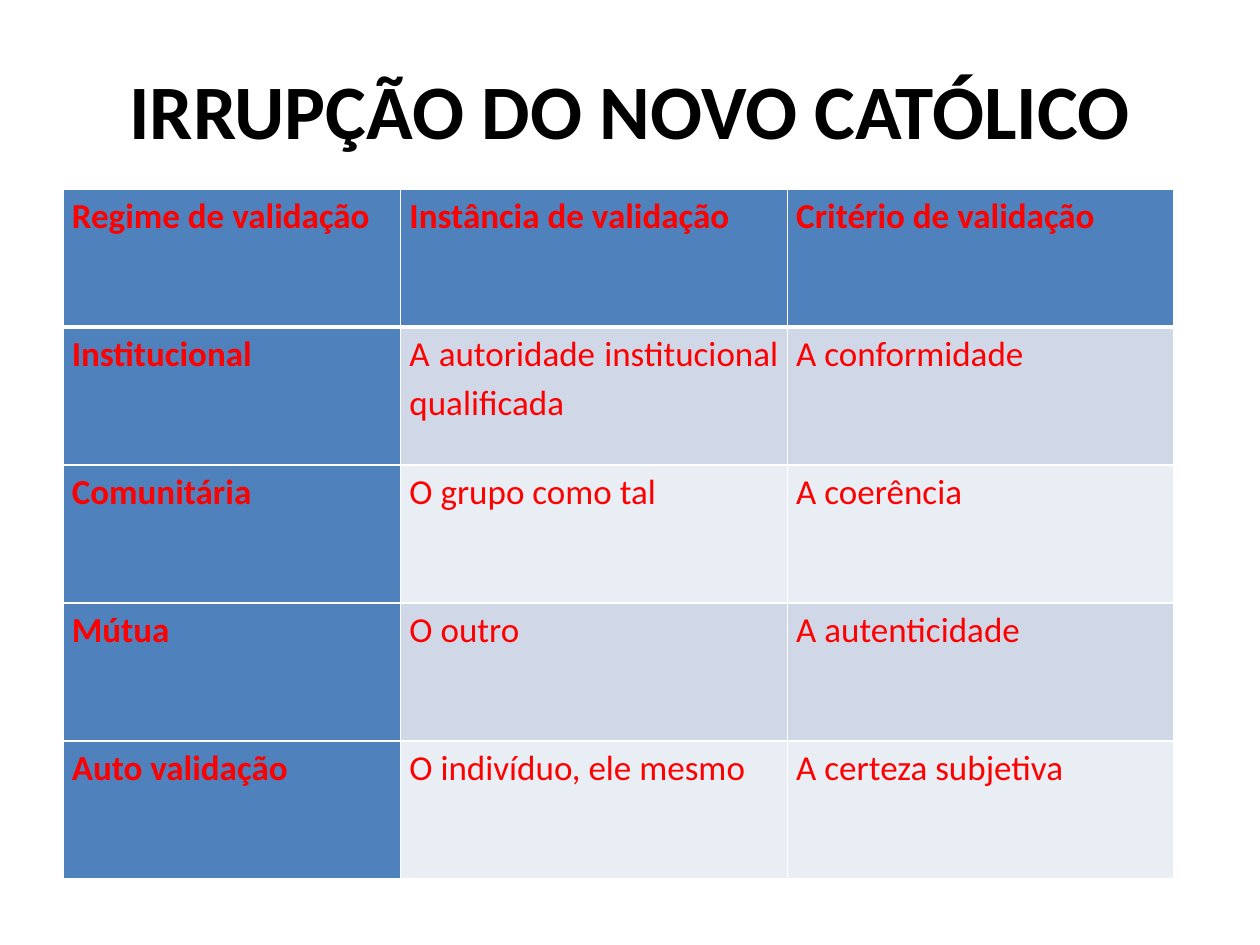
from lxml import etree
from pptx import Presentation
from pptx.dml.color import RGBColor
from pptx.enum.text import MSO_ANCHOR, PP_ALIGN
from pptx.oxml.ns import qn
from pptx.util import Inches, Pt

CENTER, JUSTIFY = PP_ALIGN.CENTER, PP_ALIGN.JUSTIFY
TOP, MIDDLE = MSO_ANCHOR.TOP, MSO_ANCHOR.MIDDLE

TITLE = "IRRUPÇÃO DO NOVO CATÓLICO"
REGIMES = [
    ["Regime de validação", "Instância de validação", "Critério de validação"],
    ["Institucional", "A autoridade institucional \nqualificada", "A conformidade"],
    ["Comunitária", "O grupo como tal", "A coerência"],
    ["Mútua", "O outro", "A autenticidade"],
    ["Auto validação", "O indivíduo, ele mesmo", "A certeza subjetiva"],
]
COLUMN_WIDTHS = [2.68, 3.07, 3.07]


def color(hex_value):
    return RGBColor.from_string(hex_value)


class SlideBuilder:
    FONT = "Calibri"
    TITLE_COLOR, CELL_COLOR = "000000", "FF0000"
    HEADER_FILL, BORDER = "4F81BD", "FFFFFF"
    BANDS = ["E9EDF4", "D0D8E8"]

    def __init__(self, presentation):
        self.slide = presentation.slides.add_slide(presentation.slide_layouts[6])
        self.width = presentation.slide_width
        self.height = presentation.slide_height

    def add_lines(self, frame, text, size, text_color, bold, align, spacing=1.0):
        """Add one paragraph for each line of text."""
        for index, line in enumerate(text.split("\n")):
            paragraph = frame.add_paragraph() if index else frame.paragraphs[0]
            paragraph.alignment = align
            paragraph.line_spacing = spacing
            run = paragraph.add_run()
            run.text = line
            run.font.name = self.FONT
            run.font.size = Pt(size)
            run.font.bold = bold
            run.font.color.rgb = color(text_color)

    def title(self, text, left, top, width, height):
        """Place the title; lengths are shares of the slide's size."""
        box = self.slide.shapes.add_textbox(
            int(left * self.width), int(top * self.height),
            int(width * self.width), int(height * self.height))
        frame = box.text_frame
        frame.word_wrap = True
        frame.vertical_anchor = MIDDLE
        self.add_lines(frame, text, 44, self.TITLE_COLOR, True, CENTER)

    def borders(self, cell, widths):
        properties = cell._tc.get_or_add_tcPr()
        for side, points in widths.items():
            line = etree.SubElement(properties, qn(f"a:ln{side}"), w=str(Pt(points)))
            fill = etree.SubElement(line, qn("a:solidFill"))
            etree.SubElement(fill, qn("a:srgbClr"), val=self.BORDER)

    def table(self, rows, column_widths, left, top, height):
        """Place the table; left, top and height are shares of the slide's size."""
        table = self.slide.shapes.add_table(
            len(rows), len(column_widths),
            int(left * self.width), int(top * self.height),
            Inches(sum(column_widths)), int(height * self.height)).table
        table.first_row = table.horz_banding = False
        for column, width in zip(table.columns, column_widths):
            column.width = Inches(width)
        for r, texts in enumerate(rows):
            for c, text in enumerate(texts):
                self.cell(table.cell(r, c), text, r, c)

    def cell(self, cell, text, row, column):
        heading = row == 0 or column == 0
        cell.margin_left = cell.margin_right = Inches(0.07)
        cell.margin_top = cell.margin_bottom = 0
        cell.vertical_anchor = TOP
        self.borders(cell, {"L": 1, "R": 1,
                            "T": 3 if row == 1 else 1,
                            "B": 3 if row == 0 else 1})
        cell.fill.solid()
        cell.fill.fore_color.rgb = color(
            self.HEADER_FILL if heading else self.BANDS[row % 2])
        self.add_lines(cell.text_frame, text, 20, self.CELL_COLOR, heading,
                       JUSTIFY, 1.15)


def main():
    presentation = Presentation()
    presentation.slide_width = Inches(10)
    presentation.slide_height = Inches(7.5)
    builder = SlideBuilder(presentation)
    builder.title(TITLE, 0.05, 0.04, 0.9, 0.15)
    builder.table(REGIMES, COLUMN_WIDTHS, 0.05, 0.2, 0.73)
    presentation.save("out.pptx")


if __name__ == "__main__":
    main()
